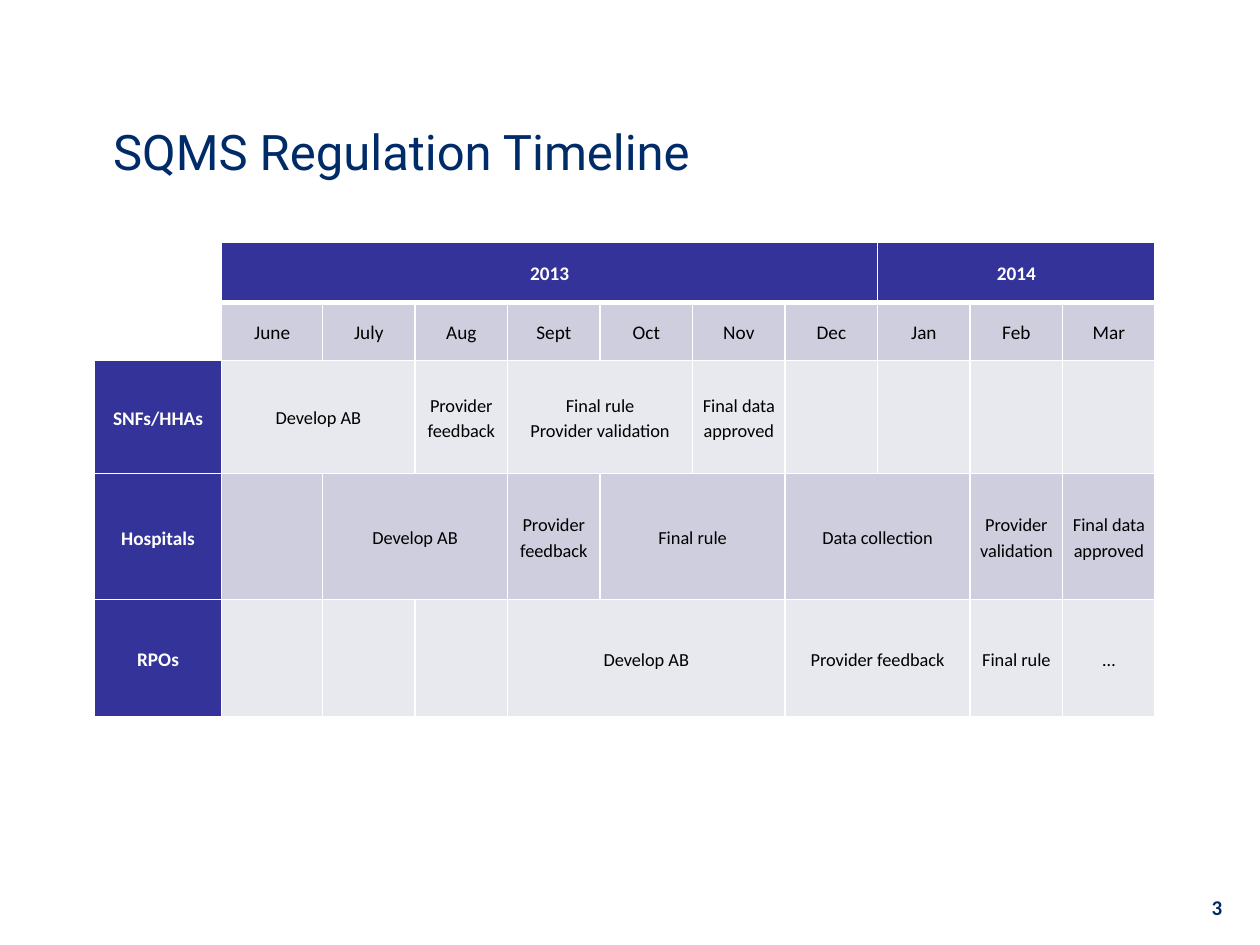
"""Builds the SQMS regulation timeline slide."""
from dataclasses import dataclass

from lxml import etree
from pptx import Presentation
from pptx import util as u
from pptx.dml.color import RGBColor
from pptx.enum import text
from pptx.oxml.ns import qn

SLIDE_WIDTH, SLIDE_HEIGHT = 10, 7.5
NAVY, INDIGO, LAVENDER, PALE = "002B69", "333399", "CECEDE", "E8E8EF"
WHITE, BLACK = "FFFFFF", "000000"
TABLE_WIDTH, LABEL_WIDTH, FIRST_MONTH_WIDTH, MONTH_COUNT = 8.42, 1.01, 0.8, 10
ROW_HEIGHTS = [0.48, 0.46, 0.9, 1, 0.93]
ROW_FILLS = [INDIGO, LAVENDER, PALE, LAVENDER, PALE]
MONTHS = ["June", "July", "Aug", "Sept", "Oct", "Nov", "Dec", "Jan", "Feb", "Mar"]


@dataclass
class Style:
    size: float
    colour: str
    bold: bool = False
    font: str = "Calibri"
    align: text.PP_ALIGN = text.PP_ALIGN.CENTER


@dataclass
class Entry:
    row: int
    column: int
    lines: list[str]
    style: Style
    span: int = 1
    space_after: float = 0


HEADING = Style(11, WHITE, bold=True)
MONTH = Style(11, BLACK)
STEP = Style(10.5, BLACK)
TITLE = Style(28, NAVY, font="Roboto", align=text.PP_ALIGN.LEFT)
PAGE_NUMBER = Style(12, NAVY, bold=True, align=text.PP_ALIGN.RIGHT)

ENTRIES = [
    Entry(0, 1, ["2013"], HEADING, 7, 10),
    Entry(0, 8, ["2014"], HEADING, 3, 10),
    *[Entry(1, column, [name], MONTH, 1, 10) for column, name in enumerate(MONTHS, 1)],
    *[Entry(row, 0, [name], HEADING, 1, 10)
      for row, name in enumerate(["SNFs/HHAs", "Hospitals", "RPOs"], 2)],
    Entry(2, 1, ["Develop AB"], STEP, 2),
    Entry(2, 3, ["Provider feedback"], STEP),
    Entry(2, 4, ["Final rule", "Provider validation"], STEP, 2),
    Entry(2, 6, ["Final data approved"], STEP),
    Entry(3, 2, ["Develop AB"], STEP, 2),
    Entry(3, 4, ["Provider feedback"], STEP),
    Entry(3, 5, ["Final rule"], STEP, 2),
    Entry(3, 7, ["Data collection"], STEP, 2),
    Entry(3, 9, ["Provider validation"], STEP),
    Entry(3, 10, ["Final data approved"], STEP),
    Entry(4, 4, ["Develop AB"], STEP, 3),
    Entry(4, 7, ["Provider feedback"], STEP, 2),
    Entry(4, 9, ["Final rule"], STEP),
    Entry(4, 10, ["…"], STEP),
]


def colour(value: str) -> RGBColor:
    """Turn a hex string into a colour."""
    return RGBColor.from_string(value)


def write(paragraph, words: str, style: Style) -> None:
    """Add one styled run to a paragraph."""
    paragraph.alignment = style.align
    run = paragraph.add_run()
    run.text = words
    run.font.name = style.font
    run.font.size = u.Pt(style.size)
    run.font.bold = style.bold
    run.font.color.rgb = colour(style.colour)


def add_text(slide, share: tuple[float, ...], words: str, style: Style) -> None:
    """Place a line of text in a box given as shares of the slide."""
    left, top, width, height = share
    box = slide.shapes.add_textbox(
        u.Inches(left * SLIDE_WIDTH), u.Inches(top * SLIDE_HEIGHT),
        u.Inches(width * SLIDE_WIDTH), u.Inches(height * SLIDE_HEIGHT))
    frame = box.text_frame
    frame.word_wrap = True
    frame.vertical_anchor = text.MSO_ANCHOR.MIDDLE
    write(frame.paragraphs[0], words, style)


def set_borders(cell, top: float, bottom: float) -> None:
    """Give a cell white borders, with top and bottom widths in points."""
    properties = cell._tc.get_or_add_tcPr()
    for side, width in {"lnL": 1, "lnR": 1, "lnT": top, "lnB": bottom}.items():
        line = etree.SubElement(properties, qn(f"a:{side}"), w=str(u.Pt(width)))
        fill = etree.SubElement(line, qn("a:solidFill"))
        etree.SubElement(fill, qn("a:srgbClr"), val=WHITE)


def fill_entry(table, entry: Entry) -> None:
    """Merge the columns of an entry and write its lines."""
    cell = table.cell(entry.row, entry.column)
    if entry.span > 1:
        cell.merge(table.cell(entry.row, entry.column + entry.span - 1))
    for index, words in enumerate(entry.lines):
        frame = cell.text_frame
        paragraph = frame.add_paragraph() if index else frame.paragraphs[0]
        paragraph.line_spacing = 1.15
        paragraph.space_after = u.Pt(entry.space_after)
        write(paragraph, words, entry.style)


def add_timeline(slide) -> None:
    """Draw the timeline table."""
    month_width = (TABLE_WIDTH - LABEL_WIDTH - FIRST_MONTH_WIDTH) / (MONTH_COUNT - 1)
    widths = [LABEL_WIDTH, FIRST_MONTH_WIDTH] + [month_width] * (MONTH_COUNT - 1)
    table = slide.shapes.add_table(
        len(ROW_HEIGHTS), len(widths), u.Inches(0.75), u.Inches(1.92),
        u.Inches(TABLE_WIDTH), u.Inches(sum(ROW_HEIGHTS))).table
    for column, width in zip(table.columns, widths):
        column.width = u.Inches(width)
    for row_index, (row, height) in enumerate(zip(table.rows, ROW_HEIGHTS)):
        row.height = u.Inches(height)
        for column_index, cell in enumerate(row.cells):
            set_borders(cell, 3 if row_index == 1 else 1, 3 if row_index == 0 else 1)
            shade = ROW_FILLS[row_index]
            if column_index == 0:
                shade = WHITE if row_index < 2 else INDIGO
            cell.fill.solid()
            cell.fill.fore_color.rgb = colour(shade)
            cell.vertical_anchor = text.MSO_ANCHOR.MIDDLE
            cell.margin_left = cell.margin_right = u.Inches(0.07)
            cell.margin_top = cell.margin_bottom = 0
    for entry in ENTRIES:
        fill_entry(table, entry)


def main() -> None:
    """Build and save the presentation."""
    presentation = Presentation()
    presentation.slide_width = u.Inches(SLIDE_WIDTH)
    presentation.slide_height = u.Inches(SLIDE_HEIGHT)
    slide = presentation.slides.add_slide(presentation.slide_layouts[6])
    add_text(slide, (0.77, 0.94, 0.21, 0.04), "3", PAGE_NUMBER)
    add_text(slide, (0.08, 0.09, 0.85, 0.14), "SQMS Regulation Timeline", TITLE)
    add_timeline(slide)
    presentation.save("out.pptx")


if __name__ == "__main__":
    main()
